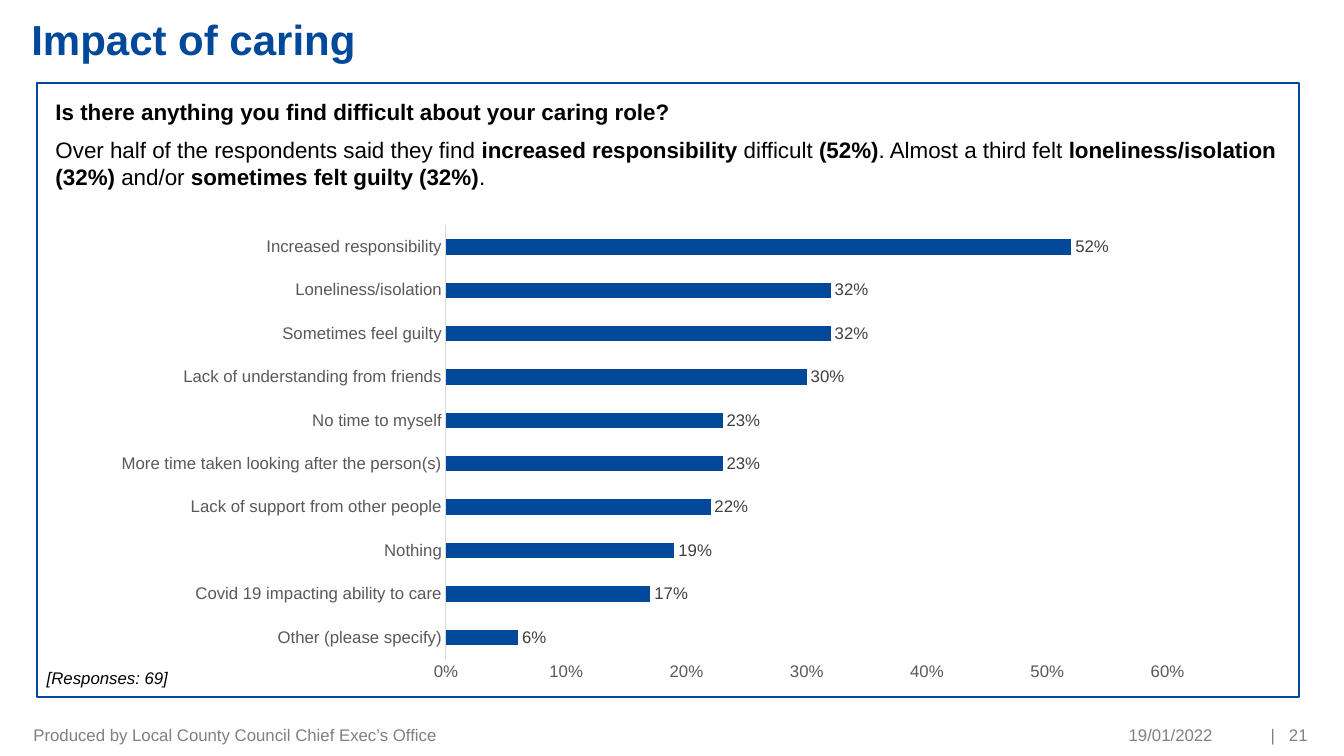
from dataclasses import dataclass
from lxml.etree import SubElement
from pptx import Presentation
from pptx.chart.data import CategoryChartData
from pptx.dml.color import RGBColor
from pptx.enum.chart import XL_CHART_TYPE, XL_LABEL_POSITION, XL_TICK_MARK
from pptx.enum.shapes import MSO_SHAPE
from pptx.enum.text import MSO_ANCHOR, MSO_AUTO_SIZE, PP_ALIGN
from pptx.oxml.ns import qn
from pptx.util import Inches, Pt


@dataclass(frozen=True)
class Theme:
    font: str = "Arial"
    blue: str = "004899"
    black: str = "000000"
    gray: str = "808080"
    tick: str = "595959"
    label: str = "404040"
    rule: str = "D9D9D9"
    head: int = 30
    body: int = 16
    small: int = 12


THEME = Theme()
WIDE, HIGH = Inches(13.33), Inches(7.5)
INSET = (0.1, 0.05, 0.1, 0.05)
FOOT_TOP, FOOT_HIGH = 96.13, 2
PLOT = {"x": 0.31, "y": 0.02, "w": 0.65, "h": 0.91}

LEAD = [("Is there anything you find difficult about your caring role?", True)]
FINDING = [
    ("Over half of the respondents said they find ", False),
    ("increased responsibility ", True),
    ("difficult ", False),
    ("(52%)", True),
    (". Almost a third felt ", False),
    ("loneliness/isolation (32%) ", True),
    ("and/or ", False),
    ("sometimes felt guilty (32%)", True),
    (".", False),
]
SHARES = [
    ("Increased responsibility", 0.52),
    ("Loneliness/isolation", 0.32),
    ("Sometimes feel guilty", 0.32),
    ("Lack of understanding from friends", 0.30),
    ("No time to myself", 0.23),
    ("More time taken looking after the person(s)", 0.23),
    ("Lack of support from other people", 0.22),
    ("Nothing", 0.19),
    ("Covid 19 impacting ability to care", 0.17),
    ("Other (please specify)", 0.06),
]


def area(left, top, width, height):
    return (
        round(WIDE * left / 100),
        round(HIGH * top / 100),
        round(WIDE * width / 100),
        round(HIGH * height / 100),
    )


def place(shape, spot):
    shape.left, shape.top, shape.width, shape.height = area(*spot)


def style(font, size, color, bold=False, italic=False):
    font.name = THEME.font
    font.size = Pt(size)
    font.bold = bold
    font.italic = italic
    font.color.rgb = RGBColor.from_string(color)


def write(para, text, size, color, bold=False, italic=False):
    run = para.add_run()
    run.text = text
    style(run.font, size, color, bold, italic)
    return run


def setup(frame, anchor, inset=INSET):
    frame.word_wrap = True
    frame.auto_size = MSO_AUTO_SIZE.NONE
    frame.vertical_anchor = anchor
    (frame.margin_left, frame.margin_top,
     frame.margin_right, frame.margin_bottom) = map(Inches, inset)


def add_line(slide, spot, anchor, inset=INSET, align=PP_ALIGN.LEFT):
    frame = slide.shapes.add_textbox(*area(*spot)).text_frame
    setup(frame, anchor, inset)
    para = frame.paragraphs[0]
    para.alignment = align
    return para


def add_title(slide, text):
    title = slide.shapes.title
    place(title, (1.58, 1.1, 38.86, 7.33))
    setup(title.text_frame, MSO_ANCHOR.BOTTOM, (0.1, 0.05, 0.1, 0))
    para = title.text_frame.paragraphs[0]
    para.alignment = PP_ALIGN.LEFT
    write(para, text, THEME.head, THEME.blue, bold=True)


def add_body(slide):
    body = slide.placeholders[1]
    place(body, (3.38, 12.3, 93.92, 13.73))
    frame = body.text_frame
    setup(frame, MSO_ANCHOR.TOP)
    for para, parts, gap in (
        (frame.paragraphs[0], LEAD, 0),
        (frame.add_paragraph(), FINDING, 8),
    ):
        props = para._p.get_or_add_pPr()
        props.set("marL", "0")
        props.set("indent", "0")
        para.space_before = Pt(gap)
        SubElement(props, qn("a:buNone"))
        for text, bold in parts:
            write(para, text, THEME.body, THEME.black, bold)


def add_frame(slide):
    frame = slide.shapes.add_shape(
        MSO_SHAPE.RECTANGLE, *area(2.74, 11.03, 93.92, 81.2))
    frame.shadow.inherit = False
    frame.fill.background()
    frame.line.color.rgb = RGBColor.from_string(THEME.blue)
    frame.line.width = Pt(1.5)


def fix_plot(chart):
    plot = chart._chartSpace.chart.plotArea
    for old in plot.findall(qn("c:layout")):
        plot.remove(old)
    layout = SubElement(plot, qn("c:layout"))
    plot.insert(0, layout)
    manual = SubElement(layout, qn("c:manualLayout"))
    SubElement(manual, qn("c:layoutTarget")).set("val", "inner")
    for side in "xy":
        SubElement(manual, qn(f"c:{side}Mode")).set("val", "edge")
    for key, share in PLOT.items():
        SubElement(manual, qn(f"c:{key}")).set("val", str(share))


def add_bars(slide):
    data = CategoryChartData(number_format="0%")
    names, values = zip(*reversed(SHARES))
    data.categories = names
    data.add_series("Series 1", values)
    chart = slide.shapes.add_chart(
        XL_CHART_TYPE.BAR_CLUSTERED, *area(7.58, 28.53, 82.6, 63.07), data
    ).chart
    style(chart.font, THEME.small, THEME.black)
    chart.has_legend = False
    chart.has_title = False
    for axis in (chart.category_axis, chart.value_axis):
        axis.has_major_gridlines = False
        axis.major_tick_mark = XL_TICK_MARK.NONE
        axis.minor_tick_mark = XL_TICK_MARK.NONE
        style(axis.tick_labels.font, THEME.small, THEME.tick)
    rule = chart.category_axis.format.line
    rule.color.rgb = RGBColor.from_string(THEME.rule)
    rule.width = Pt(0.75)
    scale = chart.value_axis
    scale.format.line.fill.background()
    scale.minimum_scale, scale.maximum_scale, scale.major_unit = 0, 0.6, 0.1
    scale.tick_labels.number_format = "0%"
    scale.tick_labels.number_format_is_linked = False
    plot = chart.plots[0]
    plot.gap_width = 182
    plot.vary_by_categories = False
    bars = plot.series[0]
    bars.format.fill.solid()
    bars.format.fill.fore_color.rgb = RGBColor.from_string(THEME.blue)
    labels = bars.data_labels
    labels.show_value = True
    labels.position = XL_LABEL_POSITION.OUTSIDE_END
    labels.number_format = "0%"
    labels.number_format_is_linked = False
    style(labels.font, THEME.small, THEME.label)
    fix_plot(chart)


def add_foot(slide):
    right = (0.1, 0.05, 0, 0.05)
    for left, width, inset, align, texts in (
        (2.48, 47.26, (0, 0.05, 0.1, 0.05), PP_ALIGN.LEFT,
         ["Produced by Local County Council Chief Exec’s Office"]),
        (72.24, 18, right, PP_ALIGN.RIGHT, ["19/01/2022"]),
        (90.92, 6.38, right, PP_ALIGN.RIGHT, ["| ", "21"]),
    ):
        spot = (left, FOOT_TOP, width, FOOT_HIGH)
        para = add_line(slide, spot, MSO_ANCHOR.MIDDLE, inset, align)
        runs = [write(para, text, THEME.small, THEME.gray) for text in texts]
        for run in runs[:-1]:
            run._r.get_or_add_rPr().set("spc", "330")


def main():
    deck = Presentation()
    deck.slide_width, deck.slide_height = WIDE, HIGH
    slide = deck.slides.add_slide(deck.slide_layouts[1])
    add_title(slide, "Impact of caring")
    add_body(slide)
    add_frame(slide)
    add_bars(slide)
    note = add_line(slide, (2.74, 87.7, 11.4, 4), MSO_ANCHOR.TOP)
    write(note, "[Responses: 69]", THEME.small, THEME.black, italic=True)
    add_foot(slide)
    deck.save("out.pptx")


if __name__ == "__main__":
    main()
